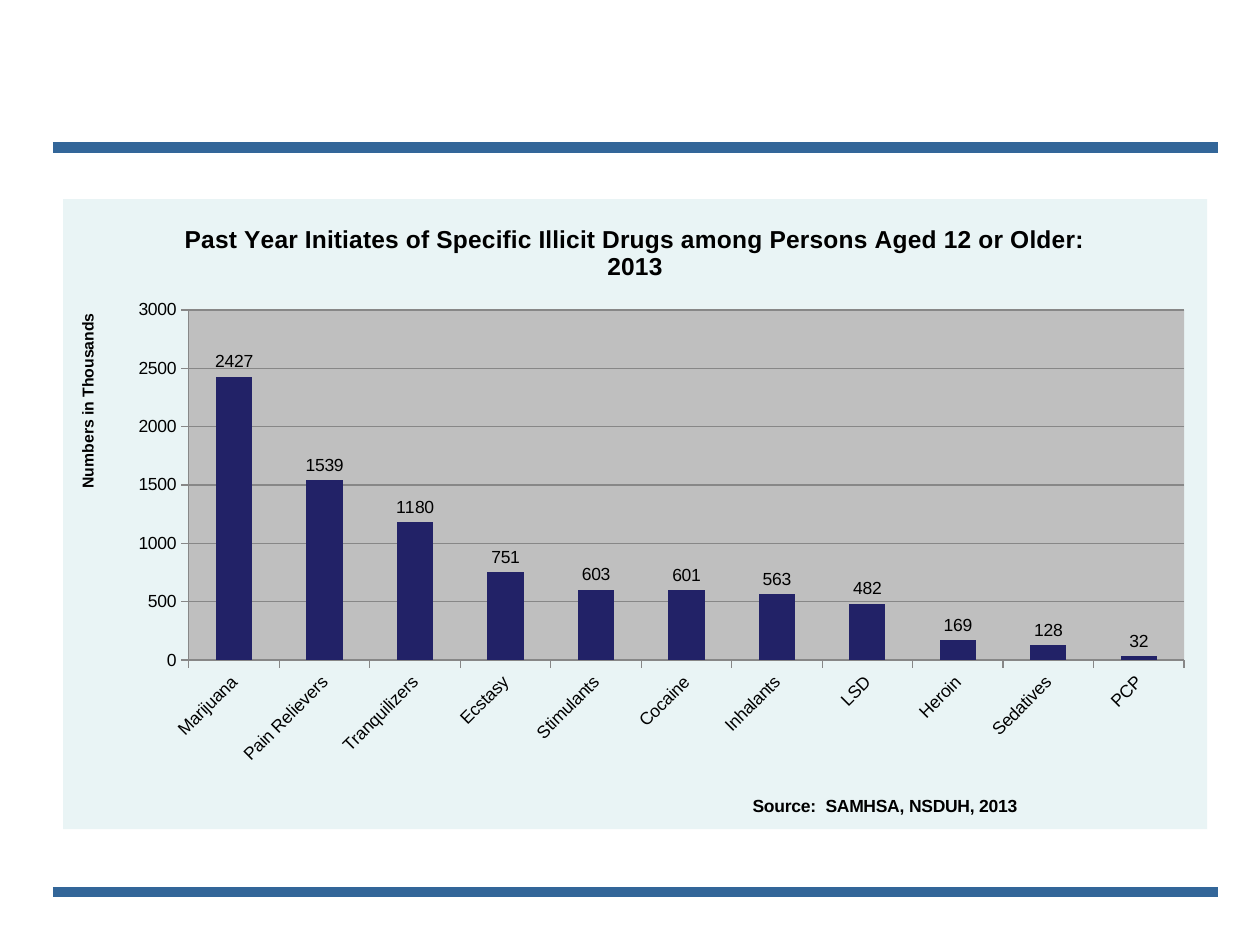
import dataclasses

import lxml.etree
import pptx
import pptx.chart.data
import pptx.dml.color
import pptx.enum.chart
import pptx.oxml
import pptx.oxml.ns
import pptx.util

qn = pptx.oxml.ns.qn


@dataclasses.dataclass(frozen=True)
class Theme:
    font: str = "Arial"
    text: str = "000000"
    rule: str = "336699"
    panel: str = "E9F4F5"
    plot: str = "BFBFBF"
    bar: str = "222267"
    grid: str = "878787"
    title_size: int = 14
    body_size: int = 10
    small_size: int = 9
    rule_width: int = 6
    grid_width: float = 0.75


def rgb(color):
    return pptx.dml.color.RGBColor.from_string(color)


def area_fill(color):
    return pptx.oxml.parse_xml(
        f'<c:spPr {pptx.oxml.ns.nsdecls("c", "a")}><a:solidFill><a:srgbClr val="{color}"/>'
        "</a:solidFill><a:ln><a:noFill/></a:ln></c:spPr>")


def place(element, index, **values):
    for old in element.findall(qn("c:layout")):
        element.remove(old)
    layout = lxml.etree.Element(qn("c:layout"))
    manual = lxml.etree.SubElement(layout, qn("c:manualLayout"))
    if "w" in values:
        values = {"layoutTarget": "inner", **values}
    for name, value in {"xMode": "edge", "yMode": "edge"}.items():
        values.setdefault(name, value)
    for name in ("layoutTarget", "xMode", "yMode", "x", "y", "w", "h"):
        if name in values:
            lxml.etree.SubElement(manual, qn(f"c:{name}")).set("val", str(values[name]))
    element.insert(index, layout)


class SlideBuilder:
    """Draw styled elements on one slide, placed by shares of its size."""

    def __init__(self, presentation, theme):
        self.theme = theme
        self.width = presentation.slide_width
        self.height = presentation.slide_height
        self.slide = presentation.slides.add_slide(presentation.slide_layouts[6])

    def box(self, left, top, width, height):
        return (int(left * self.width), int(top * self.height),
                int(width * self.width), int(height * self.height))

    def style_font(self, font, size, bold=False):
        font.name = self.theme.font
        font.size = pptx.util.Pt(size)
        font.bold = bold
        font.color.rgb = rgb(self.theme.text)

    def style_line(self, line, color, width):
        line.color.rgb = rgb(color)
        line.width = pptx.util.Pt(width)

    def rule(self, left, right, top):
        x, y, length, _ = self.box(left, top, right - left, 0)
        connector = self.slide.shapes.add_connector(
            pptx.enum.shapes.MSO_CONNECTOR.STRAIGHT, x, y, x + length, y)
        self.style_line(connector.line, self.theme.rule, self.theme.rule_width)
        lxml.etree.SubElement(connector._element.spPr, qn("a:effectLst"))

    def chart_title(self, owner, text, size):
        title = owner.chart_title if hasattr(owner, "chart_title") else owner.axis_title
        title.text_frame.text = text
        self.style_font(title.text_frame.paragraphs[0].font, size, bold=True)
        return title._element

    def style_axis(self, axis):
        axis.major_tick_mark = pptx.enum.chart.XL_TICK_MARK.OUTSIDE
        axis.minor_tick_mark = pptx.enum.chart.XL_TICK_MARK.NONE
        self.style_font(axis.tick_labels.font, self.theme.body_size)
        self.style_line(axis.format.line, self.theme.grid, self.theme.grid_width)

    def column_chart(self, box, title, category_title, value_title, values):
        theme = self.theme
        data = pptx.chart.data.CategoryChartData()
        data.categories = list(values)
        data.add_series("Series 1", list(values.values()))
        chart = self.slide.shapes.add_chart(
            pptx.enum.chart.XL_CHART_TYPE.COLUMN_CLUSTERED, *self.box(*box), data).chart
        chart.has_legend = False
        self.style_font(chart.font, theme.body_size)
        self.chart_title(chart, title, theme.title_size)

        category_axis, value_axis = chart.category_axis, chart.value_axis
        for axis in (category_axis, value_axis):
            self.style_axis(axis)
        value_axis.minimum_scale, value_axis.maximum_scale = 0, 3000
        value_axis.major_unit = 500
        value_axis.has_major_gridlines = True
        self.style_line(value_axis.major_gridlines.format.line, theme.grid, theme.grid_width)
        category_axis._element.find(qn("c:txPr")).find(qn("a:bodyPr")).set("rot", "-2700000")
        place(self.chart_title(category_axis, category_title, theme.body_size), 1, x=0.6, y=0.94)
        value_heading = self.chart_title(value_axis, value_title, theme.small_size)
        value_heading.find(".//" + qn("a:bodyPr")).set("rot", "-5400000")
        place(value_heading, 1, x=0.01, y=0.17)

        plot = chart.plots[0]
        plot.gap_width = 150
        plot.vary_by_categories = False
        plot.has_data_labels = True
        labels = plot.data_labels
        labels.show_value = True
        labels.position = pptx.enum.chart.XL_LABEL_POSITION.OUTSIDE_END
        self.style_font(labels.font, theme.body_size)
        bars = plot.series[0].format.fill
        bars.solid()
        bars.fore_color.rgb = rgb(theme.bar)

        chart_element = chart._chartSpace.find(qn("c:chart"))
        plot_area = chart_element.find(qn("c:plotArea"))
        place(plot_area, 0, x=0.11, y=0.176, w=0.87, h=0.556)
        plot_area.append(area_fill(theme.plot))
        chart_element.addnext(area_fill(theme.panel))


def main():
    presentation = pptx.Presentation()
    presentation.slide_width = pptx.util.Inches(10)
    presentation.slide_height = pptx.util.Inches(7.5)
    builder = SlideBuilder(presentation, Theme())
    for top in (1.17 / 7.5, 7.08 / 7.5):
        builder.rule(0.042, 0.967, top)
    builder.column_chart(
        (0.05, 1.58 / 7.5, 0.908, 5 / 7.5),
        "Past Year Initiates of Specific Illicit Drugs among Persons Aged 12 or Older: 2013",
        "Source:  SAMHSA, NSDUH, 2013",
        "Numbers in Thousands ",
        {"Marijuana": 2427, "Pain Relievers": 1539, "Tranquilizers": 1180, "Ecstasy": 751,
         "Stimulants": 603, "Cocaine": 601, "Inhalants": 563, "LSD": 482, "Heroin": 169,
         "Sedatives": 128, "PCP": 32})
    presentation.save("out.pptx")


if __name__ == "__main__":
    main()
